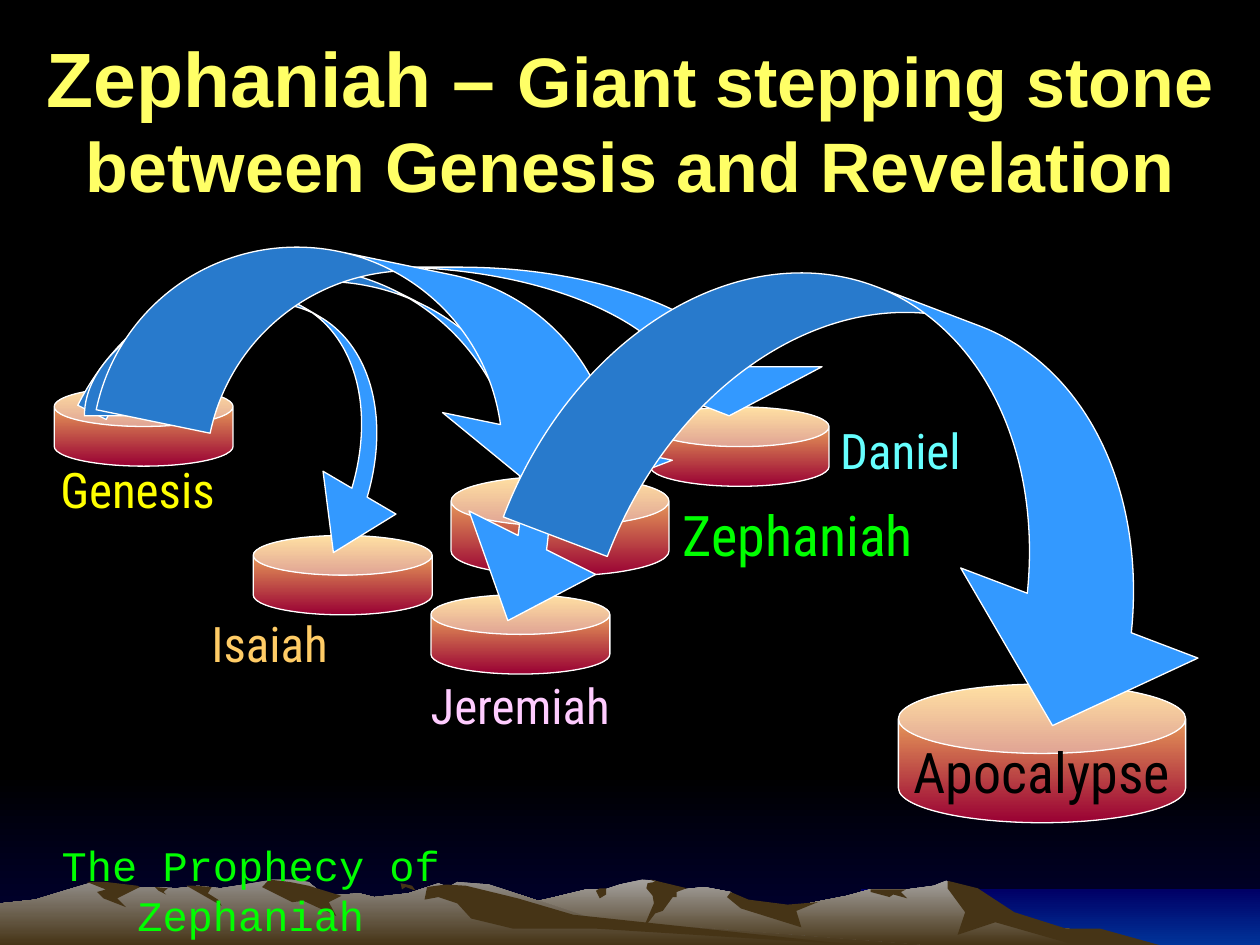
"""Build the Zephaniah stepping-stones slide."""
from dataclasses import dataclass

from lxml import etree
from pptx import Presentation
from pptx.dml.color import RGBColor
from pptx.enum import shapes, text
from pptx.util import Inches, Pt


@dataclass(frozen=True)
class Theme:
    """Hold the colours, fonts and type sizes."""
    cell: int = Inches(0.1)
    black: str = "000000"
    white: str = "FFFFFF"
    sky: tuple = ("000000", "000038")
    sea: tuple = ("000066", "003399")
    far: tuple = ("A5A29F", "463416")
    near: tuple = ("938F8B", "463416")
    shade: str = "463416"
    stone: tuple = ("FFCC66", "990033")
    arrow: str = "3399FF"
    title: str = "FFFF66"
    green: str = "00FF00"
    head: str = "Arial"
    mono: str = "Courier New"
    body: str = "Roboto Condensed"
    small: int = 28
    big: int = 32
    line: float = 0.75


T = Theme()
STONES = [(4.3, 30.7, 14.2, 6.3), (35.8, 37.8, 17.3, 7.9), (20.1, 42.5, 14.2, 6.3),
          (34.2, 47.2, 14.2, 6.3), (51.6, 32.3, 14.2, 6.3)]
NAMES = [("Genesis", (3.8, 36, 14.9, 5.7), T.small, "FFFF00"),
         ("Daniel", (65.7, 32.9, 12.3, 5.7), T.small, "66FFFF"),
         ("Zephaniah", (53.2, 39.2, 21, 6.3), T.big, T.green),
         ("Isaiah", (15.8, 48.2, 12, 5.7), T.small, "FFCC66"),
         ("Jeremiah", (33.2, 53.1, 16.7, 5.7), T.small, "FFCCFF")]
ARROWS = [((8.9, 24.4, 26.2, 15.6), 30.4, (0.09, 0.43, 0.33)),
          ((8.2, 23.6, 43.8, 19.4), 26.6, (0.13, 0.58, 0.33)),
          ((6.7, 21.2, 59.9, 11.8), 0, (0.47, 1.48, 0.33)),
          ((8.8, 21.2, 46.5, 16.2), 11.7, (0.57, 1.15, 0.33)),
          ((43, 24.4, 56.7, 27.6), 20.8, (0.32, 0.73, 0.33))]
FAR = [(88.8, 5.2), (85.4, 4), (83.8, 3.8), (79.3, 2.3), (76.9, 0.8), (75.1, 0.1),
       (74.1, 0.5), (71.9, 0.8), (69, 0.8), (67.2, 1.3), (62.1, 2.3), (58.8, 1.9),
       (58, 1), (55.9, 0.6), (53.2, 0.9), (52, 0.1), (51, 0), (49.2, 0.4), (48, 0.8),
       (46.5, 0.8), (43.2, 1.6), (38.9, 2.3), (35.8, 3), (30.4, 4.7), (28.8, 5.2)]
NEAR = [(73, 5.2), (47.3, 3.2), (38.8, 0.4), (36.3, 0.2), (35.6, 0.6), (34.8, 0.3),
        (32.4, 1.1), (29.7, 1.4), (28.5, 1.1), (25.8, 1.3), (24.5, 0.2), (23.2, 0),
        (21.6, 0), (20, 0.3), (17.5, 0.7), (15.7, 0.5), (14, 0.7), (12.2, 0.6),
        (10.3, 0.7), (7.4, 0.2), (5.4, 0.8), (2.8, 1.6), (0, 1.9), (0, 5.2)]
FARSHADE = [
    [(87.3, 3.9), (84.6, 3.9), (80.5, 2.6), (77.6, 0.7), (75.2, 0.1), (75.2, 0.7),
     (76.6, 2.6), (76, 4.4), (79, 3.4), (85.3, 5.2), (92, 5.2)],
    [(51.6, 0), (52, 0.2), (51.4, 0.3), (51.3, 0.7), (51.8, 1.3), (51.9, 1.9), (51, 4),
     (52, 2.7), (52.6, 2.5), (53.4, 1.4), (53.7, 1.4), (53.7, 1), (54.5, 0.7)],
    [(58, 1), (57.7, 1.4), (58.8, 2.3), (63.6, 3.8), (63.2, 2.5), (64.9, 1.8),
     (62.5, 2), (59.4, 1.6)],
    [(71.2, 0.8), (69.1, 0.8), (69.1, 1), (70.6, 1.4), (70.9, 1.2), (72, 1.5),
     (71.5, 1), (71.9, 0.8)],
    [(47.3, 0.9), (47.6, 0.7), (48.1, 0.7), (48.1, 1.2), (47.6, 1.5)]]
NEARSHADE = [
    [(21.2, 0.2), (20.8, 0.6), (23.2, 1.8), (24.1, 1.7), (26.7, 2.9), (26.1, 1.8),
     (27.1, 1.3), (24.5, 0.5), (23, 0.2), (21.3, 0)],
    [(37, 0.5), (35.4, 0.4), (33.9, 0.6), (33.7, 1.6), (34.8, 1.4), (36.3, 1.9),
     (37.4, 3.1), (40.7, 3.9), (47.2, 3.9), (68, 5.2), (45.5, 2.8), (41.1, 1.5)],
    [(31.8, 0.3), (32.7, 0.5), (33, 0.9), (32.2, 0.6), (31.9, 0.8)],
    [(15.4, 0.5), (16.8, 0.6), (16.5, 1.1), (17.3, 1.6), (17.6, 2.1), (14.8, 0.5)],
    [(13.3, 0.7), (13, 1), (13.2, 1.2), (12.6, 0.9), (12.3, 0.6)],
    [(10.9, 0.5), (11.1, 0.6), (9.3, 1.5), (10, 2.2), (8.2, 1.5), (7.7, 1), (8.4, 0.8),
     (6.9, 0.2), (8.4, 0.2)]]


def span(box):
    """Turn a box of grid columns and rows into slide lengths."""
    return [round(n * T.cell) for n in box]


def paint(shape, fill, line=None):
    """Give a shape a plain or top-to-bottom fill and an optional outline."""
    shape.shadow.inherit = False
    if isinstance(fill, tuple):
        shape.fill.gradient()
        shape.fill.gradient_angle = 270
        for stop, tone, place in zip(shape.fill.gradient_stops, fill, (0, 1)):
            stop.color.rgb, stop.position = RGBColor.from_string(tone), place
    else:
        shape.fill.solid()
        shape.fill.fore_color.rgb = RGBColor.from_string(fill)
    if line:
        shape.line.color.rgb = RGBColor.from_string(line)
        shape.line.width = Pt(T.line)
    else:
        shape.line.fill.background()
    return shape


def write(shape, runs, font=T.body, color=T.white, bold=False, align="LEFT",
          anchor="TOP", wrap=False):
    """Set runs of text and size in a shape."""
    frame = shape.text_frame
    frame.word_wrap = wrap
    frame.vertical_anchor = getattr(text.MSO_ANCHOR, anchor)
    par = frame.paragraphs[0]
    par.alignment = getattr(text.PP_ALIGN, align)
    for words, size in runs:
        run = par.add_run()
        run.text = words
        run.font.name, run.font.size, run.font.bold = font, Pt(size), bold
        run.font.color.rgb = RGBColor.from_string(color)


def label(slide, box, runs, **form):
    """Add a text box."""
    write(slide.shapes.add_textbox(*span(box)), runs, **form)


def solid(slide, kind, box, fill, line=None):
    """Add a preset shape."""
    form = getattr(shapes.MSO_SHAPE, kind)
    return paint(slide.shapes.add_shape(form, *span(box)), fill, line)


def patch(slide, box, dots, fill):
    """Add an outline whose points count from the corner of the box."""
    pts = [span((box[0] + x, box[1] + y)) for x, y in dots]
    pen = slide.shapes.build_freeform(*pts[0])
    pen.add_line_segments(pts[1:], close=True)
    paint(pen.convert_to_shape(), fill)


def scene(slide, box):
    """Lay sky, sea and mountains along the foot of the box."""
    left, top, wide, high = box
    base = top + high
    solid(slide, "RECTANGLE", (left, base - 13.6, wide, 13.6), T.sky)
    solid(slide, "RECTANGLE", (left + 68.3, base - 4.4, wide - 68.3, 4.4), T.sea)
    range_box = (left, base - 5.2, wide, 5.2)
    for ridge, tone, shades in ((FAR, T.far, FARSHADE), (NEAR, T.near, NEARSHADE)):
        patch(slide, range_box, ridge, tone)
        for dots in shades:
            patch(slide, range_box, dots, T.shade)


def heads(slide, box):
    """Place the title at the top of the box and the footer at its foot."""
    left, top, wide, high = box
    label(slide, (left, top + high - 5.9, 39.8, 6), [("The Prophecy of Zephaniah", 24)],
          font=T.mono, color=T.green, align="CENTER", anchor="BOTTOM", wrap=True)
    label(slide, (left, top + 1.9, wide, 15.1),
          [("Zephaniah – ", 44),
           ("Giant stepping stone between Genesis and Revelation", 40)],
          font=T.head, color=T.title, bold=True, align="CENTER", wrap=True)


def stones(slide, box):
    """Place the stones, their names and the leaping arrows in the box."""
    def shift(part):
        return (box[0] + part[0], box[1] + part[1], *part[2:])

    for part in STONES + [(71.3, 54.3, 22.8, 11)]:
        can = solid(slide, "CAN", shift(part), T.stone, T.white)
        can.adjustments[0] = 0.5
    write(can, [("Apocalypse", T.big)], color=T.black, align="CENTER", anchor="MIDDLE")
    for name, part, size, tone in NAMES:
        label(slide, shift(part), [(name, size)], color=tone)
    for part, turn, bends in ARROWS:
        leap = solid(slide, "CURVED_DOWN_ARROW", shift(part), T.arrow, T.white)
        leap.rotation = turn
        for i, bend in enumerate(bends):
            leap.adjustments[i] = bend


def main():
    """Build and save the slide."""
    deck = Presentation()
    deck.slide_width, deck.slide_height = span((100, 75))
    slide = deck.slides.add_slide(deck.slide_layouts[6])
    slide.background.fill.solid()
    slide.background.fill.fore_color.rgb = RGBColor.from_string(T.black)
    page = (0, 0, 100, 75)
    for region in (scene, heads, stones):
        region(slide, page)
    deck.save("out.pptx")


if __name__ == "__main__":
    main()
